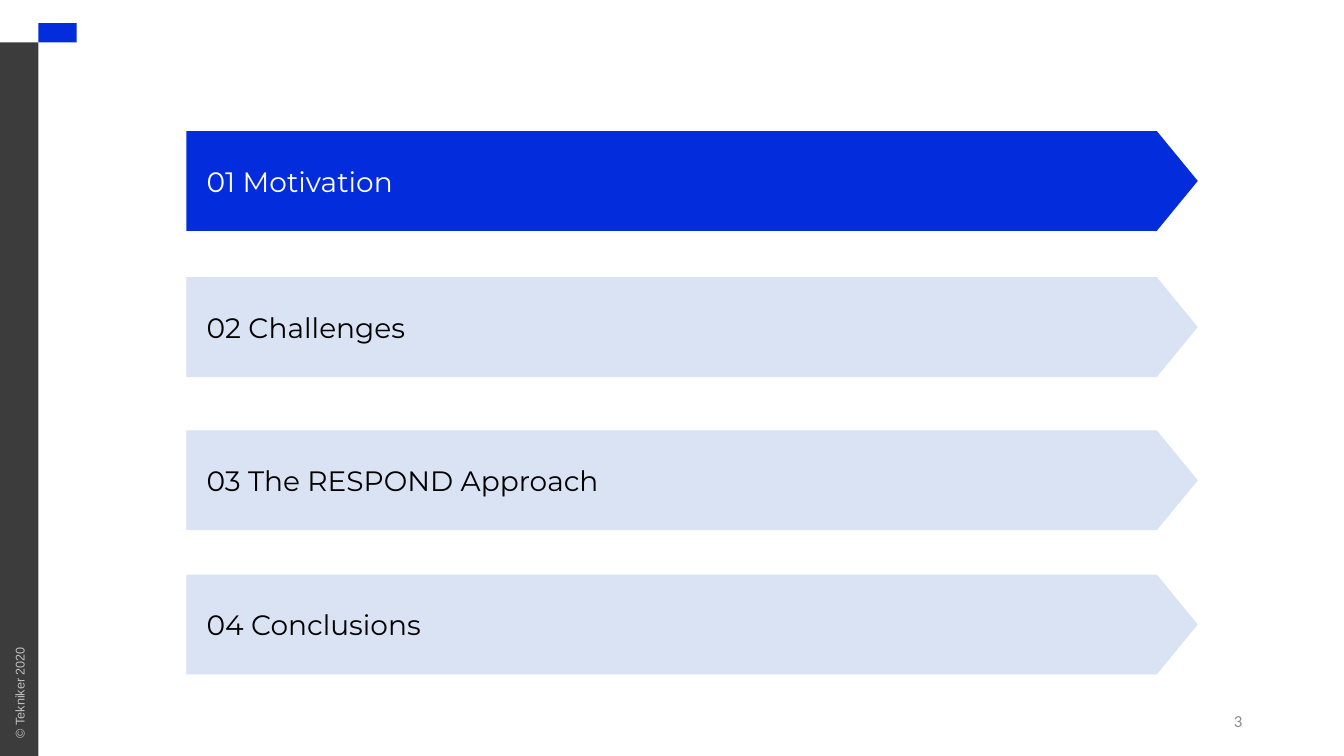
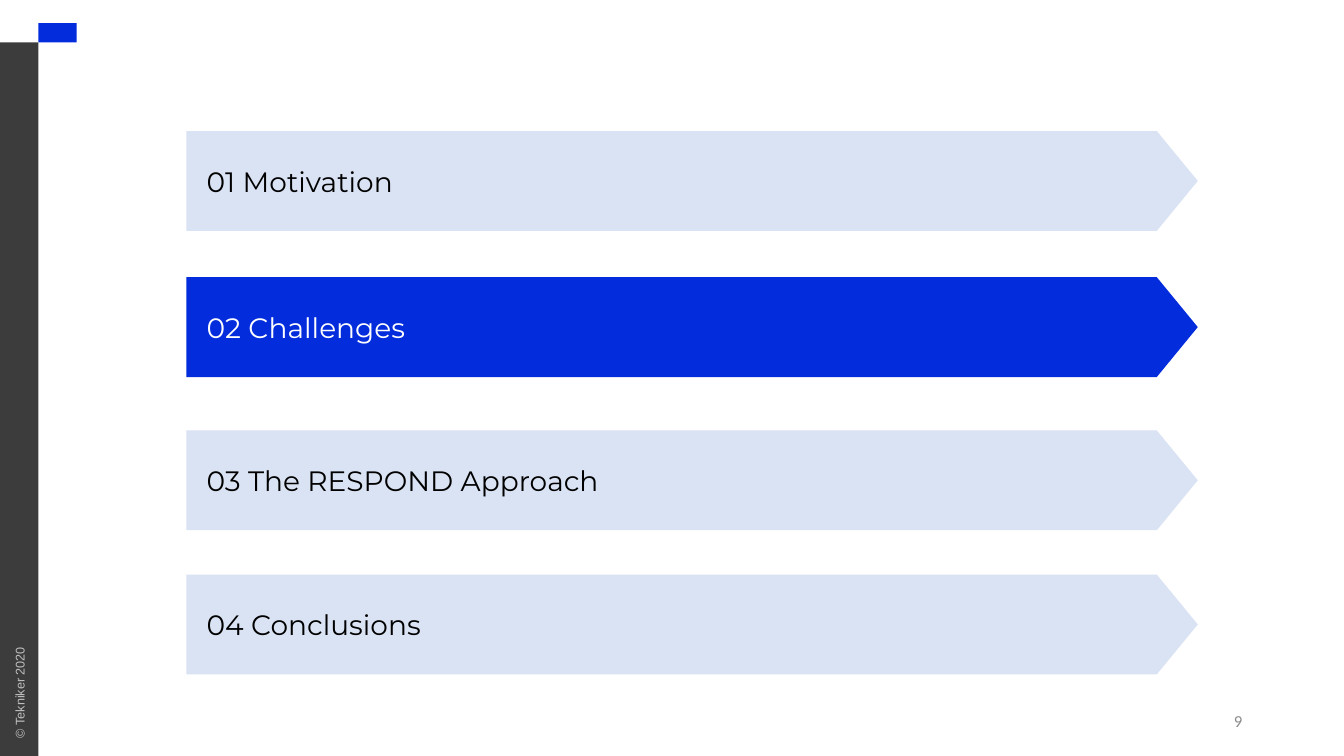
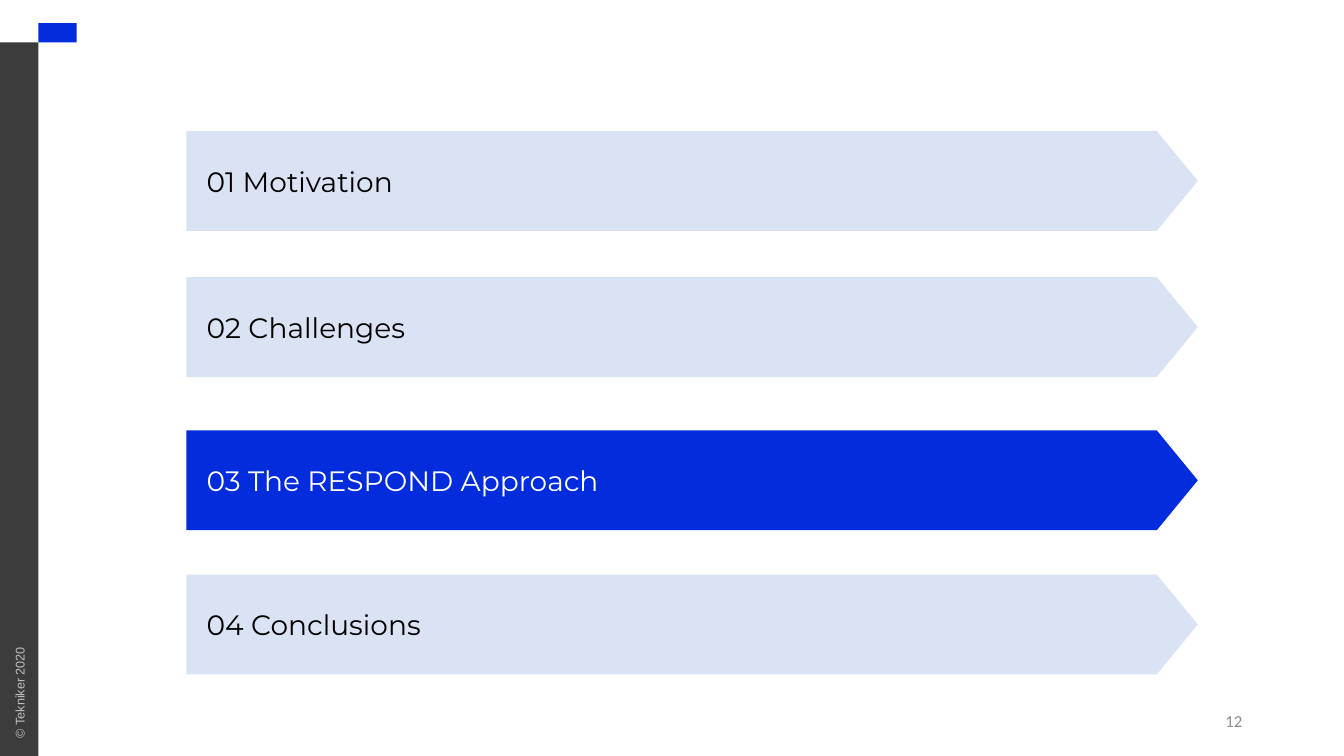
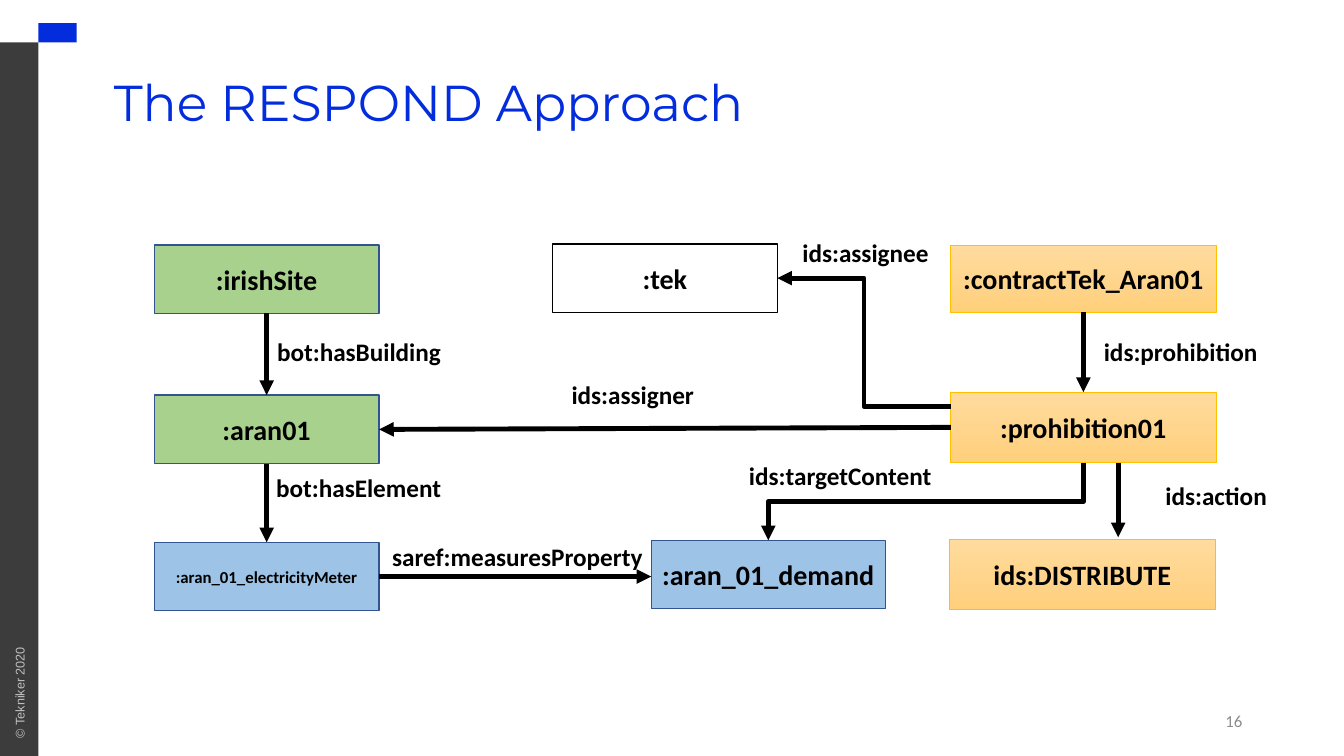
import lxml.etree
import pptx
import pptx.dml.color
import pptx.enum.shapes
import pptx.enum.text
import pptx.oxml.ns
import pptx.util

SHAPE = pptx.enum.shapes.MSO_SHAPE
CONNECTOR = pptx.enum.shapes.MSO_CONNECTOR
ALIGN = pptx.enum.text.PP_ALIGN
ANCHOR = pptx.enum.text.MSO_ANCHOR
FIT = pptx.enum.text.MSO_AUTO_SIZE
TOP, LEFT, BOTTOM, RIGHT = range(4)

PX = 9144  # EMU in one px, 100 px to the inch
SLIDE_SIZE = (1333, 750)

THEME = {
    "brand": "032CDD", "sidebar": "3C3C3C", "pale": "DAE3F3",
    "black": "000000", "white": "FFFFFF",
    "arrow_width": 3.5, "tip": 0.41,
}
TEXT = {
    "title": {"size": 36, "name": "Montserrat", "color": THEME["brand"]},
    "agenda": {"size": 20, "name": "Montserrat", "color": THEME["black"]},
    "agenda_on": {"size": 20, "name": "Montserrat", "color": THEME["white"]},
    "number": {"size": 12, "name": "Calibri", "color": "8C8C8C"},
    "copyright": {"size": 9, "name": "Arial", "color": "BFBFBF"},
    "node": {"size": 20, "name": "Calibri", "color": THEME["black"], "bold": True},
    "node_small": {"size": 12, "name": "Calibri", "color": THEME["black"], "bold": True},
    "relation": {"size": 18, "name": "Calibri", "color": THEME["black"], "bold": True},
}
# fill (two colours make a gradient), line colour, line width
NODE_LOOKS = {
    "building": ("A9D18E", "325491", 1),
    "device": ("9DC3E6", "325491", 1),
    "contract": (("FFDB9E", "FFD07C"), "FFC000", 0.5),
    "party": (THEME["white"], THEME["black"], 1),
}

COPYRIGHT = "© Tekniker 2020"
AGENDA = [
    ("01 Motivation", 130),
    ("02 Challenges", 275),
    ("03 The RESPOND Approach", 427),
    ("04 Conclusions", 570),
]
AGENDA_SLIDES = [("3", 0), ("9", 1), ("12", 2)]  # slide number, current item

GRAPH_TITLE = "The RESPOND Approach"
GRAPH_NUMBER = "16"
NODES = {
    ":irishSite": ("building", "node", (153, 243, 223, 68)),
    ":aran01": ("building", "node", (153, 392, 223, 68)),
    ":aran_01_electricityMeter": ("device", "node_small", (153, 538, 223, 68)),
    ":aran_01_demand": ("device", "node", (646, 536, 232, 68)),
    ":contractTek_Aran01": ("contract", "node", (943, 243, 263, 67)),
    ":prohibition01": ("contract", "node", (943, 389, 263, 70)),
    "ids:DISTRIBUTE": ("contract", "node", (942, 535, 263, 70)),
    ":tek": ("party", "node", (548, 242, 223, 68)),
}
# each end is a (node, side) to join or an (x, y) point
STRAIGHT_ARROWS = [
    ((":irishSite", BOTTOM), (":aran01", TOP)),
    ((":aran01", BOTTOM), (":aran_01_electricityMeter", TOP)),
    ((":aran_01_electricityMeter", RIGHT), (646, 572)),
    ((":contractTek_Aran01", BOTTOM), (":prohibition01", TOP)),
    ((1109, 459), (1109, 533)),
    ((":prohibition01", LEFT), (":aran01", RIGHT)),
]
SIDEWAYS_ELBOW = ((943, 403), (":tek", RIGHT))
DOWNWARD_ELBOW = ((":prohibition01", BOTTOM), (":aran_01_demand", TOP))
RELATIONS = [
    ("bot:hasBuilding", (265, 329, 184, 40)),
    ("bot:hasElement", (264, 464, 185, 40)),
    ("saref:measuresProperty", (379, 532, 271, 40)),
    ("ids:assigner", (557, 371, 142, 40)),
    ("ids:assignee", (786, 231, 146, 40)),
    ("ids:action", (1146, 472, 122, 40)),
    ("ids:targetContent", (733, 452, 203, 40)),
    ("ids:prohibition", (1085, 329, 174, 40)),
]


def emu(lengths):
    return [pptx.util.Emu(length * PX) for length in lengths]


def rgb(color):
    return pptx.dml.color.RGBColor.from_string(color)


def write(shape, words, style, align=ALIGN.LEFT, **frame_format):
    frame = shape.text_frame
    for key, value in {"word_wrap": True, **frame_format}.items():
        setattr(frame, key, value)
    paragraph = frame.paragraphs[0]
    paragraph.alignment = align
    run = paragraph.add_run()
    run.text = words
    for key, value in TEXT[style].items():
        if key == "color":
            run.font.color.rgb = rgb(value)
        else:
            setattr(run.font, key, pptx.util.Pt(value) if key == "size" else value)
    return paragraph


def add_text(slide, box, words, style, **options):
    shape = slide.shapes.add_textbox(*emu(box))
    return shape, write(shape, words, style, **options)


def add_label(slide, box, words, style):
    """One unwrapped line in a box that fits its text."""
    return add_text(slide, box, words, style, word_wrap=False,
                    auto_size=FIT.SHAPE_TO_FIT_TEXT)[0]


def add_block(slide, kind, box, fill, line=None, line_width=1):
    block = slide.shapes.add_shape(kind, *emu(box))
    block.shadow.inherit = False
    if isinstance(fill, tuple):
        block.fill.gradient()
        block.fill.gradient_angle = 270
        for stop, color in zip(block.fill.gradient_stops, fill):
            stop.color.rgb = rgb(color)
    else:
        block.fill.solid()
        block.fill.fore_color.rgb = rgb(fill)
    if line:
        block.line.color.rgb = rgb(line)
        block.line.width = pptx.util.Pt(line_width)
    else:
        block.line.fill.background()
    return block


def add_arrow(slide, kind, ends, nodes):
    points = [(0, 0) if end[0] in nodes else end for end in ends]
    arrow = slide.shapes.add_connector(kind, *emu(points[0] + points[1]))
    for end, join in zip(ends, (arrow.begin_connect, arrow.end_connect)):
        if end[0] in nodes:
            join(nodes[end[0]], end[1])
    arrow.line.color.rgb = rgb(THEME["black"])
    arrow.line.width = pptx.util.Pt(THEME["arrow_width"])
    qn = pptx.oxml.ns.qn
    lxml.etree.SubElement(arrow.get_or_add_ln(), qn("a:tailEnd"), type="triangle")
    lxml.etree.SubElement(arrow.element.spPr, qn("a:effectLst"))
    return arrow


def turn_downward(arrow):
    """Make an elbow running down and left leave and arrive vertically."""
    center_x = arrow.left + arrow.width // 2
    center_y = arrow.top + arrow.height // 2
    width, height = arrow.height, arrow.width
    frame = arrow.element.spPr.find(pptx.oxml.ns.qn("a:xfrm"))
    for flip in ("flipH", "flipV"):
        frame.attrib.pop(flip, None)
    frame.set("rot", str(90 * 60000))
    placement = {"left": center_x - width // 2, "top": center_y - height // 2,
                 "width": width, "height": height}
    for key, value in placement.items():
        setattr(arrow, key, value)


def add_slide(deck, number):
    slide = deck.slides.add_slide(deck.slide_layouts[6])
    add_block(slide, SHAPE.RECTANGLE, (0, 42, 38, 708), THEME["sidebar"])
    add_block(slide, SHAPE.RECTANGLE, (38, 23, 38, 19), THEME["brand"])
    add_label(slide, (-37, 673, 113, 25), COPYRIGHT, "copyright").rotation = 270
    add_text(slide, (942, 695, 300, 40), number, "number",
             align=ALIGN.RIGHT, vertical_anchor=ANCHOR.MIDDLE)
    return slide


def add_agenda_slide(deck, number, current):
    slide = add_slide(deck, number)
    inset = pptx.util.Emu(20 * PX)
    for index, (topic, top) in enumerate(AGENDA):
        active = index == current
        banner = add_block(slide, SHAPE.PENTAGON, (185, top, 1003, 99),
                           THEME["brand" if active else "pale"])
        banner.adjustments[0] = THEME["tip"]
        write(banner, topic, "agenda_on" if active else "agenda",
              align=ALIGN.JUSTIFY, vertical_anchor=ANCHOR.MIDDLE,
              margin_left=inset, margin_right=inset)


def add_graph_slide(deck):
    slide = add_slide(deck, GRAPH_NUMBER)
    _, title = add_text(slide, (103, 32, 802, 145), GRAPH_TITLE, "title",
                        vertical_anchor=ANCHOR.MIDDLE)
    title.line_spacing = 0.9
    nodes = {}
    for name, (look, style, box) in NODES.items():
        nodes[name] = add_block(slide, SHAPE.RECTANGLE, box, *NODE_LOOKS[look])
        write(nodes[name], name, style, align=ALIGN.CENTER,
              vertical_anchor=ANCHOR.MIDDLE)
    for ends in STRAIGHT_ARROWS:
        add_arrow(slide, CONNECTOR.STRAIGHT, ends, nodes)
    add_arrow(slide, CONNECTOR.ELBOW, SIDEWAYS_ELBOW, nodes)
    turn_downward(add_arrow(slide, CONNECTOR.ELBOW, DOWNWARD_ELBOW, nodes))
    for relation, box in RELATIONS:
        add_label(slide, box, relation, "relation")


def main():
    deck = pptx.Presentation()
    deck.slide_width, deck.slide_height = emu(SLIDE_SIZE)
    for number, current in AGENDA_SLIDES:
        add_agenda_slide(deck, number, current)
    add_graph_slide(deck)
    deck.save("out.pptx")


if __name__ == "__main__":
    main()
